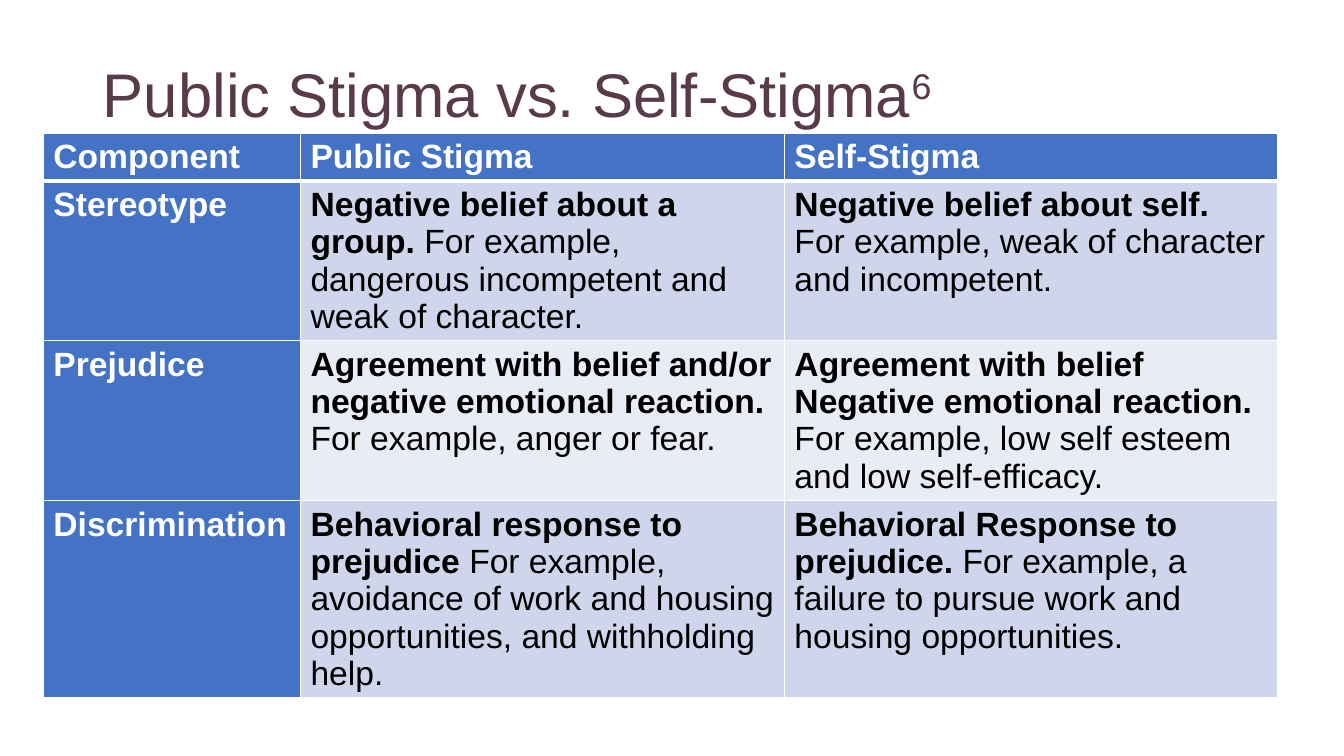
"""Build the slide comparing public stigma with self-stigma."""
from dataclasses import dataclass

import lxml.etree
import pptx
import pptx.dml.color
import pptx.enum.text
import pptx.oxml.ns
import pptx.util

Inches = pptx.util.Inches


@dataclass(frozen=True)
class Theme:
    font: str = "Arial"
    title_size: int = 44
    table_size: int = 24
    title: str = "593A4B"
    header: str = "4472C4"
    header_text: str = "FFFFFF"
    header_rule: str = "FFFFFF"
    header_rule_width: int = 3
    body_text: str = "000000"
    bands: tuple[str, str] = ("CFD5EA", "E9EBF5")


@dataclass(frozen=True)
class Meaning:
    belief: str
    example: str


@dataclass(frozen=True)
class Component:
    name: str
    public: Meaning
    personal: Meaning
    height: float


THEME = Theme()
HEADINGS = ("Component", "Public Stigma", "Self-Stigma")
HEADING_HEIGHT = 0.47
COLUMN_WIDTHS = (2.55, 4.8, 4.89)
COMPONENTS = (
    Component(
        "Stereotype",
        Meaning("Negative belief about a group. ",
                "For example, dangerous incompetent and weak of character."),
        Meaning("Negative belief about self.",
                " For example, weak of character and incompetent."),
        1.58,
    ),
    Component(
        "Prejudice",
        Meaning("Agreement with belief and/or negative emotional reaction. ",
                "For example, anger or fear."),
        Meaning("Agreement with belief Negative emotional reaction.",
                " For example, low self esteem and low self-efficacy."),
        1.58,
    ),
    Component(
        "Discrimination",
        Meaning("Behavioral response to prejudice ",
                "For example, avoidance of work and housing opportunities, "
                "and withholding help."),
        Meaning("Behavioral Response to prejudice.",
                " For example, a failure to pursue work and housing opportunities."),
        1.95,
    ),
)


def add_text(paragraph, text: str, *, size: int, color: str,
             bold: bool = False, superscript: bool = False) -> None:
    """Append a formatted run to a paragraph."""
    run = paragraph.add_run()
    run.text = text
    run.font.name = THEME.font
    run.font.size = pptx.util.Pt(size)
    run.font.bold = bold
    run.font.color.rgb = pptx.dml.color.RGBColor.from_string(color)
    if superscript:
        run.font._element.set("baseline", "30000")


def fill_cell(cell, color: str) -> None:
    """Give a table cell a solid fill."""
    cell.fill.solid()
    cell.fill.fore_color.rgb = pptx.dml.color.RGBColor.from_string(color)


def rule_below(cell) -> None:
    """Draw the heavy rule under a column heading."""
    qn = pptx.oxml.ns.qn
    rule = lxml.etree.Element(
        qn("a:lnB"), w=str(pptx.util.Pt(THEME.header_rule_width)))
    fill = lxml.etree.SubElement(rule, qn("a:solidFill"))
    lxml.etree.SubElement(fill, qn("a:srgbClr"), val=THEME.header_rule)
    cell._tc.get_or_add_tcPr().insert(0, rule)


def write_heading(cell, text: str) -> None:
    """Write a row or column heading."""
    fill_cell(cell, THEME.header)
    add_text(cell.text_frame.paragraphs[0], text, size=THEME.table_size,
             color=THEME.header_text, bold=True)


def write_meaning(cell, meaning: Meaning, band: str) -> None:
    """Write a bold belief followed by its example."""
    fill_cell(cell, band)
    paragraph = cell.text_frame.paragraphs[0]
    for text, bold in ((meaning.belief, True), (meaning.example, False)):
        add_text(paragraph, text, size=THEME.table_size,
                 color=THEME.body_text, bold=bold)


def write_title(title) -> None:
    """Place and write the slide title."""
    title.left, title.top = Inches(0.92), Inches(0.61)
    title.width, title.height = Inches(11.5), Inches(1.09)
    frame = title.text_frame
    frame.auto_size = pptx.enum.text.MSO_AUTO_SIZE.NONE
    frame.vertical_anchor = pptx.enum.text.MSO_ANCHOR.TOP
    frame.margin_top = Inches(0.03)
    paragraph = frame.paragraphs[0]
    paragraph.alignment = pptx.enum.text.PP_ALIGN.LEFT
    paragraph.line_spacing = 0.9
    add_text(paragraph, "Public Stigma vs. Self-Stigma",
             size=THEME.title_size, color=THEME.title)
    add_text(paragraph, "6", size=THEME.title_size, color=THEME.title,
             superscript=True)


def add_comparison(slide) -> None:
    """Add the table of stigma components."""
    heights = (HEADING_HEIGHT, *(component.height for component in COMPONENTS))
    comparison = slide.shapes.add_table(
        len(heights), len(HEADINGS), Inches(0.43), Inches(1.32),
        Inches(sum(COLUMN_WIDTHS)), Inches(sum(heights))).table
    comparison.first_col = True
    for column, width in zip(comparison.columns, COLUMN_WIDTHS):
        column.width = Inches(width)
    for row, height in zip(comparison.rows, heights):
        row.height = Inches(height)
    for column, heading in enumerate(HEADINGS):
        write_heading(comparison.cell(0, column), heading)
        rule_below(comparison.cell(0, column))
    for row, component in enumerate(COMPONENTS, start=1):
        band = THEME.bands[(row - 1) % 2]
        write_heading(comparison.cell(row, 0), component.name)
        write_meaning(comparison.cell(row, 1), component.public, band)
        write_meaning(comparison.cell(row, 2), component.personal, band)


def main() -> None:
    """Build and save the presentation."""
    presentation = pptx.Presentation()
    presentation.slide_width = Inches(13.33)
    presentation.slide_height = Inches(7.5)
    slide = presentation.slides.add_slide(presentation.slide_layouts[5])
    write_title(slide.shapes.title)
    add_comparison(slide)
    presentation.save("out.pptx")


if __name__ == "__main__":
    main()
